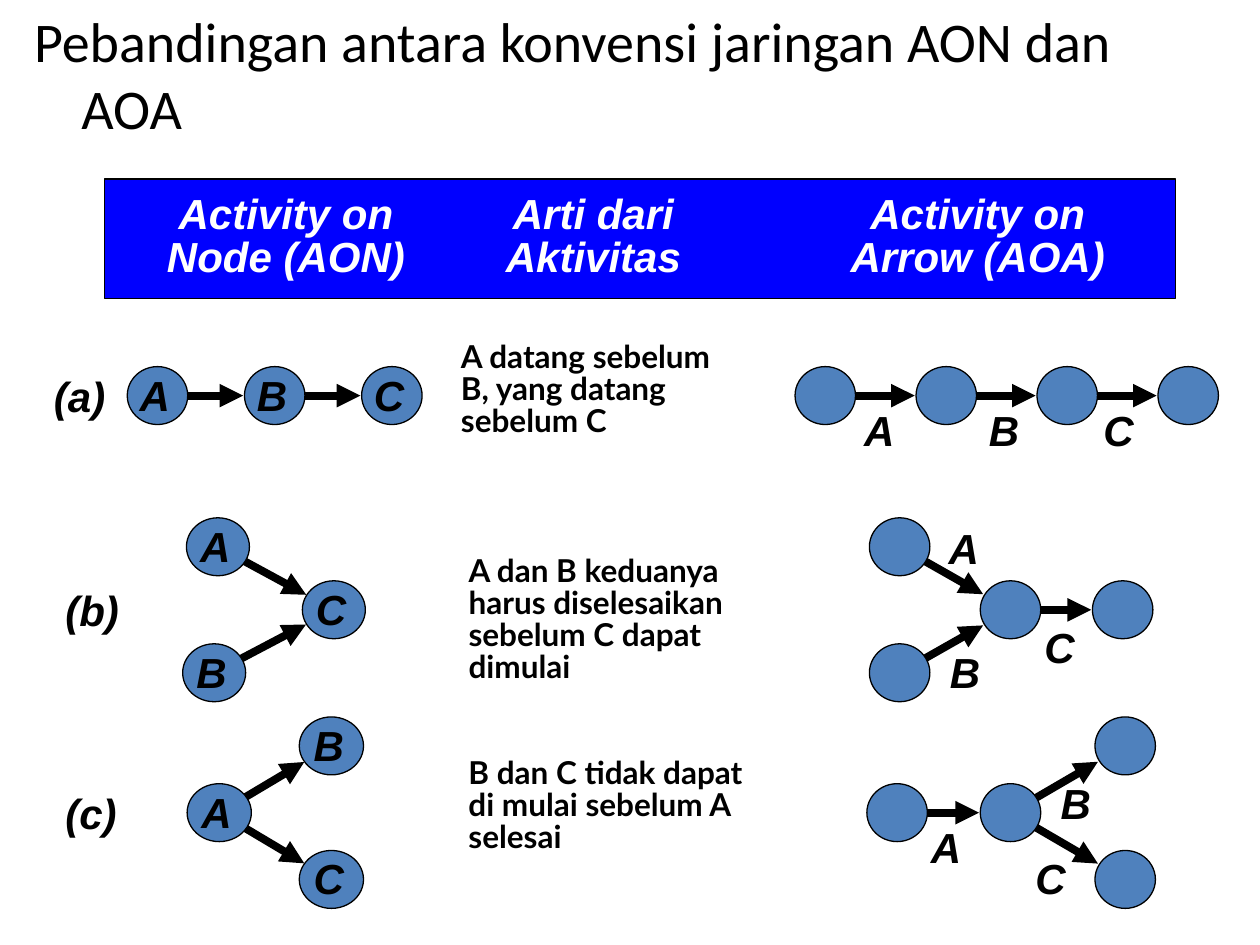
from math import hypot

from lxml import etree
from pptx import Presentation
from pptx.dml.color import RGBColor
from pptx.enum.shapes import MSO_CONNECTOR, MSO_SHAPE
from pptx.enum.text import MSO_ANCHOR, PP_ALIGN
from pptx.oxml.ns import qn
from pptx.util import Inches, Pt

ELLIPSE, RECTANGLE = MSO_SHAPE.OVAL, MSO_SHAPE.RECTANGLE
STRAIGHT = MSO_CONNECTOR.STRAIGHT
TOP, LEFT = MSO_ANCHOR.TOP, PP_ALIGN.LEFT

BLACK = RGBColor(0x00, 0x00, 0x00)
WHITE = RGBColor(0xFF, 0xFF, 0xFF)
HEADER_BLUE = RGBColor(0x00, 0x00, 0xFF)
NODE_BLUE = RGBColor(0x4F, 0x81, 0xBD)

TITLE_FONT = {"name": "Calibri", "size": Pt(32)}
LETTER_FONT = {"name": "Arial", "size": Pt(24), "bold": True, "italic": True}
MEANING_FONT = {"name": "Lato", "size": Pt(18), "bold": True}

TITLE = "Pebandingan antara konvensi jaringan AON dan AOA"
HEADER_LINES = ["\tActivity on\tArti dari\tActivity on",
                "\tNode (AON)\tAktivitas\tArrow (AOA)"]
HEADER_TABS = [1.18, 3.62, 6.67]
TIGHT = 0.85

# Node sizes, and arrow ends measured from the node centres
NODE_HEIGHT, AOA_NODE_WIDTH = 0.46, 0.48
ARROW_START, ARROW_END = 0.15, 0.25
LETTER_BOX = (0.44, 0.5)

# Nodes are (x, level): level -1 is above the row's middle, 1 is below it.
# Links are pairs of node numbers; arrow letters are (letter, centre x, centre y).
ROWS = [
    {"mark": ("(a)", 0.33, 3.14), "middle": 3.14, "spread": 0,
     "meaning": ("A datang sebelum B, yang datang sebelum C", 3.56, 2.67, 2.42, 1.12),
     "aon_width": 0.48,
     "aon": [(1.25 + 0.93 * step, 0) for step in range(3)],
     "aon_letters": "ABC",
     "aon_links": [(0, 1), (1, 2)],
     "aoa": [(6.55 + 0.96 * step, 0) for step in range(4)],
     "aoa_links": [(0, 1), (1, 2), (2, 3)],
     "arrow_letters": [("A", 6.98, 3.41), ("B", 7.97, 3.41), ("C", 8.88, 3.41)]},
    {"mark": ("(b)", 0.42, 4.84), "middle": 4.84, "spread": 0.5,
     "meaning": ("A dan B keduanya harus diselesaikan sebelum C dapat dimulai",
                 3.62, 4.37, 2.79, 1.12),
     "aon_width": 0.5,
     "aon": [(1.73, -1), (1.7, 1), (2.65, 0)],
     "aon_letters": "ABC",
     "aon_links": [(0, 2), (1, 2)],
     "aoa": [(7.14, -1), (7.14, 1), (8.02, 0), (8.91, 0)],
     "aoa_links": [(0, 2), (1, 2), (2, 3)],
     "arrow_letters": [("A", 7.65, 4.35), ("B", 7.66, 5.33), ("C", 8.41, 5.13)]},
    {"mark": ("(c)", 0.42, 6.45), "middle": 6.45, "spread": 0.53,
     "meaning": ("B dan C tidak dapat di mulai sebelum A selesai", 3.62, 5.97, 2.47, 0.87),
     "aon_width": 0.51,
     "aon": [(1.74, 0), (2.63, -1), (2.63, 1)],
     "aon_letters": "ABC",
     "aon_links": [(0, 1), (0, 2)],
     "aoa": [(7.12, 0), (8.02, 0), (8.93, -1), (8.93, 1)],
     "aoa_links": [(0, 1), (1, 2), (1, 3)],
     "arrow_letters": [("A", 7.51, 6.72), ("B", 8.54, 6.37), ("C", 8.34, 6.97)]},
]


def write(paragraph, text, font_format, color=BLACK):
    run = paragraph.add_run()
    run.text = text
    for attribute, value in font_format.items():
        setattr(run.font, attribute, value)
    run.font.color.rgb = color


def add_title(slide):
    slide.shapes.title.element.getparent().remove(slide.shapes.title.element)
    title = slide.placeholders[1]
    place = {"left": 0.17, "top": 0, "width": 9.5, "height": 7}
    for attribute, value in place.items():
        setattr(title, attribute, Inches(value))
    paragraph = title.text_frame.paragraphs[0]
    etree.SubElement(paragraph._p.get_or_add_pPr(), qn("a:buNone"))
    write(paragraph, TITLE, TITLE_FONT)


def add_filled_shape(slide, kind, box, color):
    shape = slide.shapes.add_shape(kind, *map(Inches, box))
    shape.shadow.inherit = False
    shape.fill.solid()
    shape.fill.fore_color.rgb = color
    shape.line.color.rgb = BLACK
    shape.line.width = Pt(0.75)
    return shape


def add_text(slide, text, box, font_format, wrap=True, spacing=1.0):
    frame = slide.shapes.add_textbox(*map(Inches, box)).text_frame
    frame.word_wrap = wrap
    paragraph = frame.paragraphs[0]
    paragraph.line_spacing = spacing
    write(paragraph, text, font_format)


def add_letter(slide, letter, x, y):
    width, height = LETTER_BOX
    box = (x - width / 2, y - height / 2, width, height)
    add_text(slide, letter, box, LETTER_FONT, wrap=False)


def add_arrow(slide, source, target):
    (x1, y1), (x2, y2) = source, target
    length = hypot(x2 - x1, y2 - y1)
    dx, dy = (x2 - x1) / length, (y2 - y1) / length
    ends = (x1 + ARROW_START * dx, y1 + ARROW_START * dy,
            x2 - ARROW_END * dx, y2 - ARROW_END * dy)
    arrow = slide.shapes.add_connector(STRAIGHT, *map(Inches, ends))
    arrow.line.color.rgb = BLACK
    arrow.line.width = Pt(4.5)
    etree.SubElement(arrow.line._get_or_add_ln(), qn("a:tailEnd"), type="triangle")
    etree.SubElement(arrow._element.spPr, qn("a:effectLst"))


def add_network(slide, centres, links, node_width):
    for source, target in links:
        add_arrow(slide, centres[source], centres[target])
    for x, y in centres:
        box = (x - node_width / 2, y - NODE_HEIGHT / 2, node_width, NODE_HEIGHT)
        add_filled_shape(slide, ELLIPSE, box, NODE_BLUE)


def add_row(slide, row):
    aon, aoa = ([(x, row["middle"] + level * row["spread"]) for x, level in row[side]]
                for side in ("aon", "aoa"))
    add_network(slide, aon, row["aon_links"], row["aon_width"])
    add_network(slide, aoa, row["aoa_links"], AOA_NODE_WIDTH)

    # Row mark and meaning
    mark, left, middle = row["mark"]
    add_text(slide, mark, (left, middle - 0.25, 0.65, 0.5), LETTER_FONT)
    meaning, *box = row["meaning"]
    add_text(slide, meaning, box, MEANING_FONT, spacing=TIGHT)

    # Activity letters: on the nodes for AON, beside the arrows for AOA
    for letter, (x, y) in zip(row["aon_letters"], aon):
        add_letter(slide, letter, x - 0.02, y - 0.01)
    for letter, x, y in row["arrow_letters"]:
        add_letter(slide, letter, x, y)


def add_header(slide):
    header = add_filled_shape(slide, RECTANGLE, (0.83, 1.42, 8.5, 0.95), HEADER_BLUE)
    frame = header.text_frame
    frame_format = {"margin_left": Inches(0.26), "margin_right": Inches(0.26),
                    "margin_top": Inches(0.13), "margin_bottom": Inches(0.13),
                    "vertical_anchor": TOP, "word_wrap": True}
    for attribute, value in frame_format.items():
        setattr(frame, attribute, value)
    for number, line in enumerate(HEADER_LINES):
        paragraph = frame.add_paragraph() if number else frame.paragraphs[0]
        paragraph.alignment = LEFT
        paragraph.line_spacing = TIGHT
        tabs = etree.SubElement(paragraph._p.get_or_add_pPr(), qn("a:tabLst"))
        for position in HEADER_TABS:
            etree.SubElement(tabs, qn("a:tab"), pos=str(Inches(position)), algn="ctr")
        write(paragraph, line, LETTER_FONT, WHITE)


def main():
    presentation = Presentation()
    presentation.slide_width, presentation.slide_height = Inches(10), Inches(7.5)
    slide = presentation.slides.add_slide(presentation.slide_layouts[1])
    add_title(slide)
    for row in ROWS:
        add_row(slide, row)
    add_header(slide)
    presentation.save("out.pptx")


if __name__ == "__main__":
    main()
